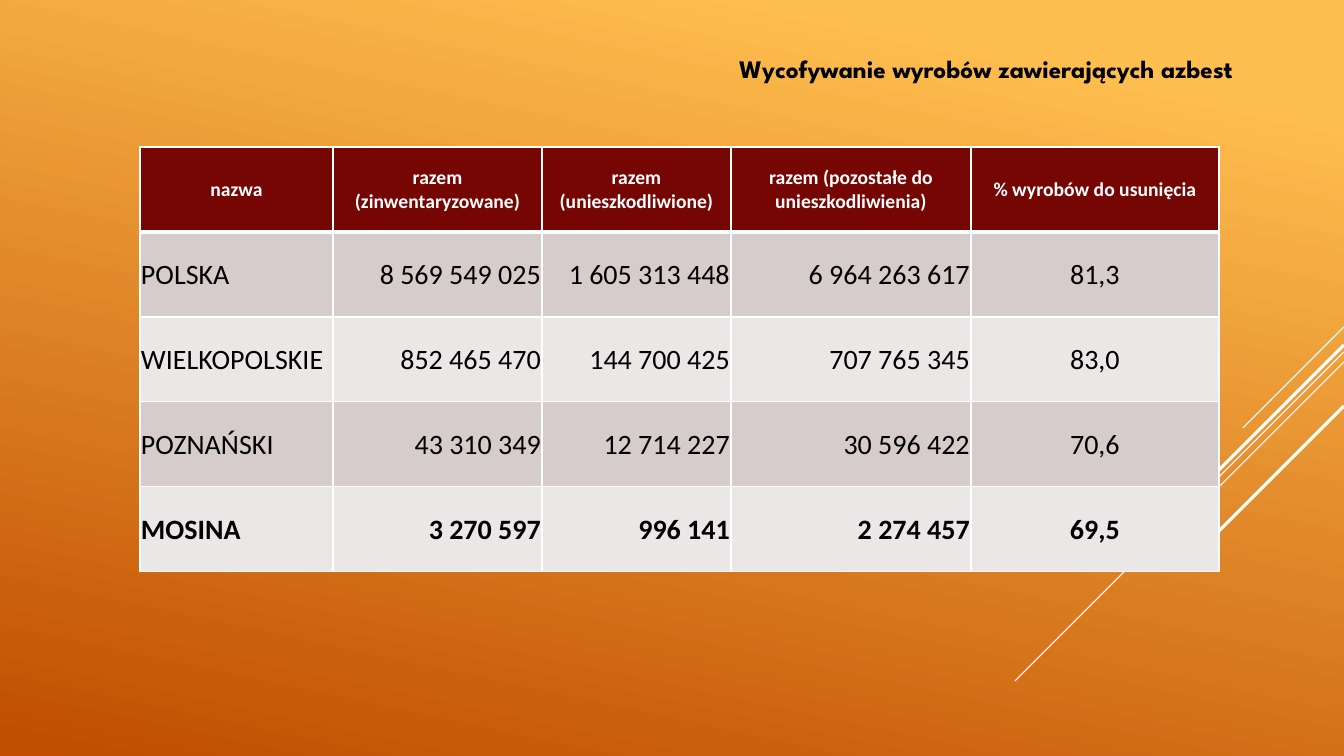
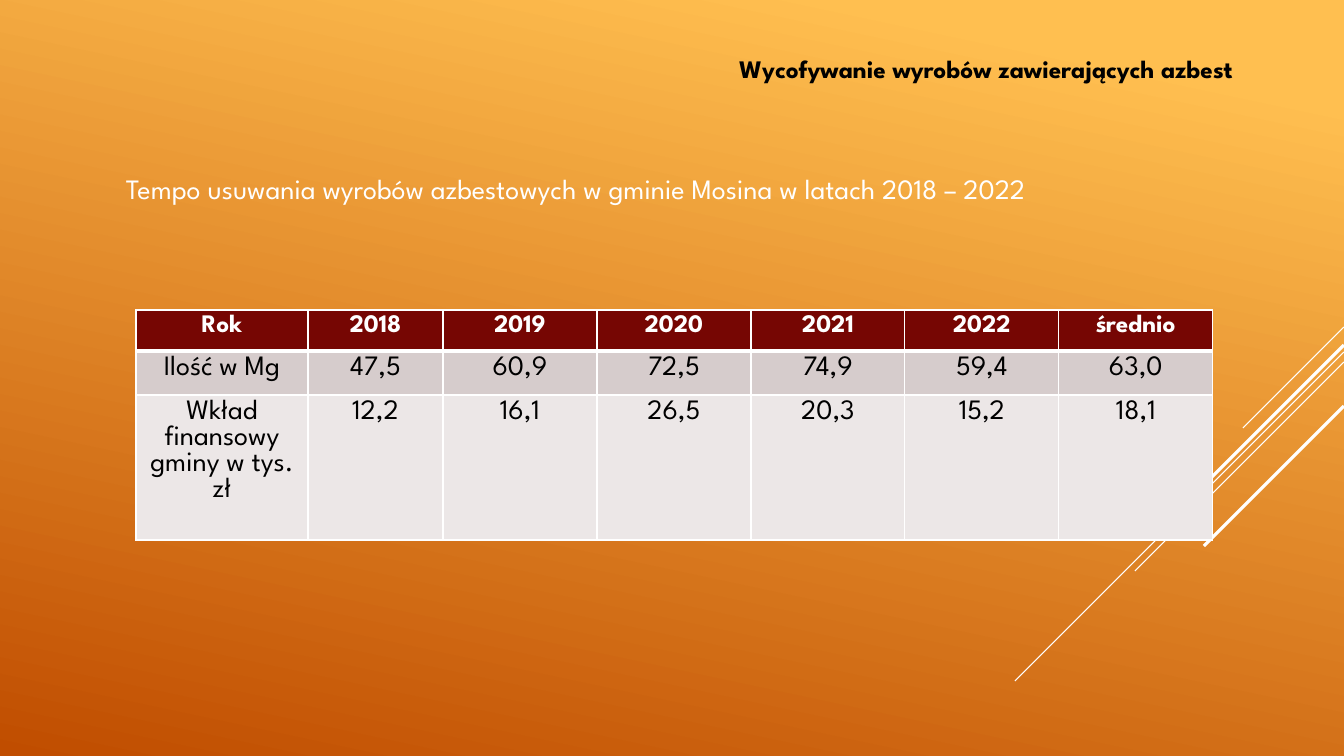
from lxml.etree import SubElement
from pptx import Presentation
from pptx.dml.color import RGBColor
from pptx.enum.shapes import MSO_CONNECTOR
from pptx.enum.text import MSO_ANCHOR, PP_ALIGN
from pptx.oxml.ns import qn
from pptx.util import Emu, Pt

SLIDE_WIDTH, SLIDE_HEIGHT = 1344, 756
SCALE = 12192000 / SLIDE_WIDTH

WHITE, BLACK = "FFFFFF", "000000"
HEADER_FILL = "760603"
BAND_FILLS = ("D6CCCC", "ECE7E7")
GRADIENT = ((0.1, "FFBF50"), (1, "C04D00"))
DISPLAY_FONT, TABLE_FONT = "League Spartan", "Calibri"
LEFT, CENTER, RIGHT = PP_ALIGN.LEFT, PP_ALIGN.CENTER, PP_ALIGN.RIGHT

TITLE = "Wycofywanie wyrobów zawierających azbest"
TITLE_BOX = (116, 49, 1127, 40)

# Top at the right slide edge, horizontal run, weight in points
DIAGONALS = (
    (327, 101, 0.75),
    (352, 329, 0.75),
    (362, 209, 0.75),
    (345, 193, 2.25),
    (406, 140, 2.25),
)

INVENTORY = (
    ("nazwa", "razem (zinwentaryzowane)", "razem (unieszkodliwione)",
     "razem (pozostałe do unieszkodliwienia)", "% wyrobów do usunięcia"),
    ("POLSKA", "8 569 549 025", "1 605 313 448", "6 964 263 617", "81,3"),
    ("WIELKOPOLSKIE", "852 465 470", "144 700 425", "707 765 345", "83,0"),
    ("POZNAŃSKI", "43 310 349", "12 714 227", "30 596 422", "70,6"),
    ("MOSINA", "3 270 597", "996 141", "2 274 457", "69,5"),
)

REMOVAL_PACE = (
    ("Rok", "2018", "2019", "2020", "2021", "2022", "średnio"),
    ("Ilość w Mg", "47,5", "60,9", "72,5", "74,9", "59,4", "63,0"),
    ("Wkład finansowy gminy w tys. zł",
     "12,2", "16,1", "26,5", "20,3", "15,2", "18,1"),
)


def px(length):
    return Emu(round(length * SCALE))


def rgb(value):
    return RGBColor.from_string(value)


def set_attributes(target, values):
    for name, value in values.items():
        setattr(target, name, value)


def write_text(frame, text, color, align, **font_values):
    paragraph = frame.paragraphs[0]
    paragraph.alignment = align
    run = paragraph.add_run()
    run.text = text
    set_attributes(run.font, font_values)
    run.font.color.rgb = rgb(color)


def add_text(slide, box, text, color, align, **font_values):
    frame = slide.shapes.add_textbox(*map(px, box)).text_frame
    set_attributes(frame, {"word_wrap": True,
                           "vertical_anchor": MSO_ANCHOR.BOTTOM})
    write_text(frame, text, color, align, name=DISPLAY_FONT, **font_values)


def add_diagonals(slide):
    for top, run, weight in DIAGONALS:
        points = (SLIDE_WIDTH, top, SLIDE_WIDTH - run, top + run)
        line = slide.shapes.add_connector(MSO_CONNECTOR.STRAIGHT,
                                          *map(px, points))
        line.line.color.rgb = rgb(WHITE)
        line.line.width = Pt(weight)
        SubElement(line._element.spPr, qn("a:effectLst"))


def add_base_slide(presentation):
    """Add a blank slide with the shared background, diagonals and title."""
    slide = presentation.slides.add_slide(presentation.slide_layouts[6])
    fill = slide.background.fill
    fill.gradient()
    fill.gradient_angle = 258
    for stop, (position, color) in zip(fill.gradient_stops, GRADIENT):
        stop.position = position
        stop.color.rgb = rgb(color)
    add_diagonals(slide)
    add_text(slide, TITLE_BOX, TITLE, BLACK, RIGHT, size=Pt(18), bold=True)
    return slide


def set_borders(cell, row_index):
    """Draw white cell borders, thicker between header and body."""
    properties = cell._tc.get_or_add_tcPr()
    thick_side = {0: "lnB", 1: "lnT"}.get(row_index)
    for side in ("lnL", "lnR", "lnT", "lnB"):
        weight = 3 if side == thick_side else 1
        border = SubElement(properties, qn(f"a:{side}"), w=str(Pt(weight)))
        fill = SubElement(border, qn("a:solidFill"))
        SubElement(fill, qn("a:srgbClr"), val=WHITE)


def add_banded_table(slide, origin, widths, heights, rows, font, header_size,
                     alignments, cell_format, bold_rows=()):
    box = (*origin, sum(widths), sum(heights))
    table = slide.shapes.add_table(len(rows), len(widths),
                                   *map(px, box)).table
    table.horz_banding = False
    for column, width in zip(table.columns, widths):
        column.width = px(width)
    for row, height in zip(table.rows, heights):
        row.height = px(height)
    for row_index, texts in enumerate(rows):
        header = row_index == 0
        fill = HEADER_FILL if header else BAND_FILLS[(row_index - 1) % 2]
        for column_index, text in enumerate(texts):
            cell = table.cell(row_index, column_index)
            set_borders(cell, row_index)
            cell.fill.solid()
            cell.fill.fore_color.rgb = rgb(fill)
            set_attributes(cell, cell_format)
            write_text(cell.text_frame, text,
                       WHITE if header else BLACK,
                       CENTER if header else alignments[column_index],
                       name=font, size=Pt(header_size if header else 20),
                       bold=header or row_index in bold_rows)


def add_inventory_slide(presentation):
    slide = add_base_slide(presentation)
    add_banded_table(
        slide, (140, 147), (193, 209, 189, 240, 248), (85,) * 5, INVENTORY,
        TABLE_FONT, 14, (LEFT, RIGHT, RIGHT, RIGHT, CENTER),
        {"vertical_anchor": MSO_ANCHOR.MIDDLE, "margin_left": px(1),
         "margin_right": px(1), "margin_top": px(1), "margin_bottom": 0},
        bold_rows=(4,))


def add_removal_pace_slide(presentation):
    slide = add_base_slide(presentation)
    add_banded_table(
        slide, (136, 310), (172, 135) + (154,) * 5, (41, 44, 145),
        REMOVAL_PACE, DISPLAY_FONT, 18, (CENTER,) * 7,
        {"vertical_anchor": MSO_ANCHOR.TOP})
    add_text(
        slide, (116, 168, 1112, 42),
        "Tempo usuwania wyrobów azbestowych w gminie Mosina w latach 2018 – 2022",
        WHITE, LEFT, size=Pt(20))


def main():
    presentation = Presentation()
    set_attributes(presentation, {"slide_width": px(SLIDE_WIDTH),
                                  "slide_height": px(SLIDE_HEIGHT)})
    add_inventory_slide(presentation)
    add_removal_pace_slide(presentation)
    presentation.save("out.pptx")


if __name__ == "__main__":
    main()
